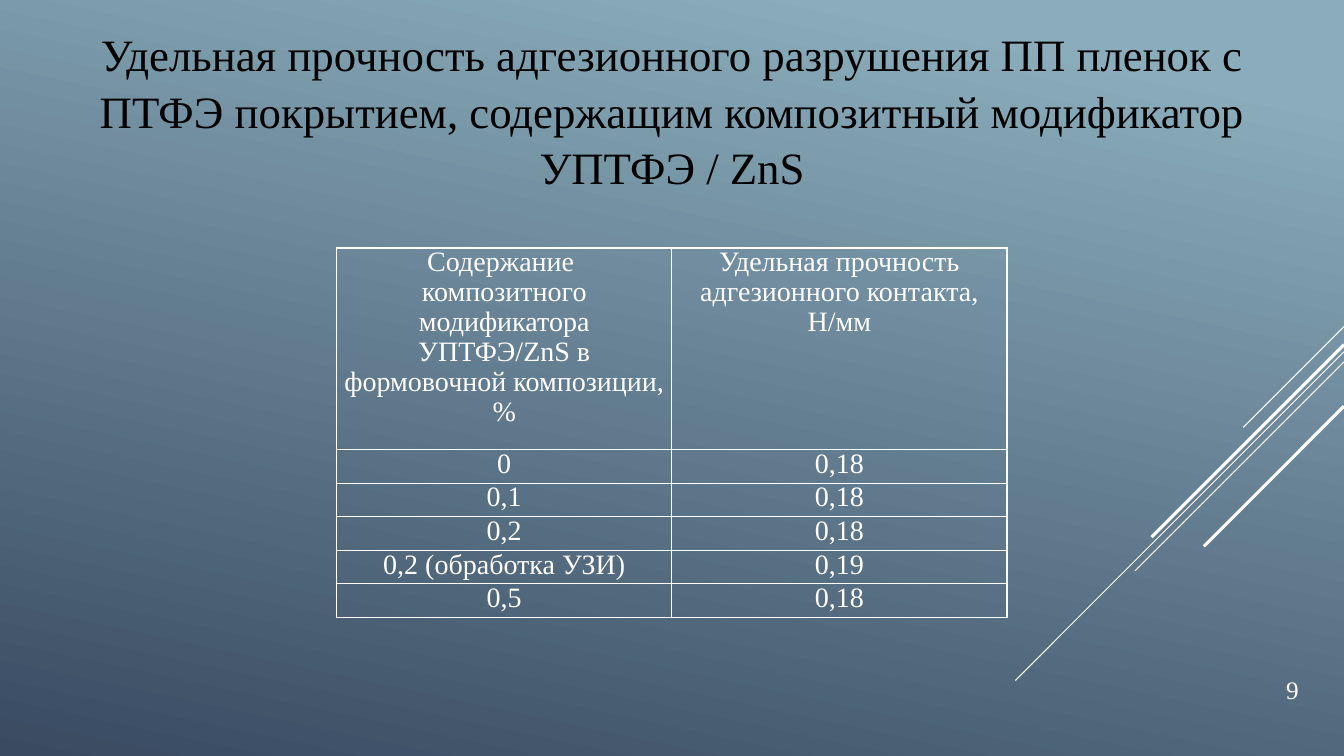
from dataclasses import dataclass

from lxml import etree
from pptx import Presentation
from pptx import util as u
from pptx.dml import color
from pptx.enum import shapes, text
from pptx.oxml import ns

STRENGTH_ROWS = [
    ("Содержание  композитного модификатора УПТФЭ/ZnS в формовочной композиции, %",
     "Удельная прочность адгезионного контакта, Н/мм"),
    ("0", "0,18"),
    ("0,1", "0,18"),
    ("0,2", "0,18"),
    ("0,2 (обработка УЗИ)", "0,19"),
    ("0,5", "0,18"),
]

# Each stroke leaves the right edge at 45 degrees: (start y, run, weight)
DIAGONAL_STROKES = [
    (233.3, 72, 0.75),
    (251.3, 234.7, 0.75),
    (258.5, 149.3, 0.75),
    (246.2, 137.5, 2.25),
    (290.2, 100.1, 2.25),
]


@dataclass(frozen=True)
class Theme:
    font: str = "Times New Roman"
    title_color: str = "000000"
    light: str = "FFFFFF"
    sky: str = "8AACBB"
    deep: str = "394A61"
    title_size: float = 32
    table_size: float = 20
    number_size: float = 18
    title_spacing: float = 1.05
    table_spacing: float = 0.96
    border: float = 1


class SlideBuilder:
    def __init__(self, slide, theme):
        self.slide = slide
        self.theme = theme

    def background(self):
        fill = self.slide.background.fill
        fill.gradient()
        fill.gradient_angle = 360 - 102
        stops = ((0.1, self.theme.sky), (1, self.theme.deep))
        for stop, (position, shade) in zip(fill.gradient_stops, stops):
            stop.position = position
            stop.color.rgb = color.RGBColor.from_string(shade)

    def stroke(self, x, y, run, weight):
        line = self.slide.shapes.add_connector(
            shapes.MSO_CONNECTOR.STRAIGHT,
            u.Pt(x), u.Pt(y), u.Pt(x - run), u.Pt(y + run))
        line.line.color.rgb = color.RGBColor.from_string(self.theme.light)
        line.line.width = u.Pt(weight)
        etree.SubElement(line._element.spPr, ns.qn("a:effectLst"))

    def set_text(self, frame, wording, size, shade, align, spacing=1.0):
        frame.word_wrap = True
        paragraph = frame.paragraphs[0]
        paragraph.text = wording
        paragraph.alignment = align
        paragraph.line_spacing = spacing
        paragraph.font.name = self.theme.font
        paragraph.font.size = u.Pt(size)
        paragraph.font.color.rgb = color.RGBColor.from_string(shade)

    def label(self, left, top, width, height, wording, size, shade, align, spacing=1.0):
        box = self.slide.shapes.add_textbox(
            u.Pt(left), u.Pt(top), u.Pt(width), u.Pt(height))
        self.set_text(box.text_frame, wording, size, shade, align, spacing)

    def table(self, left, top, column_width, header_height, row_height, rows):
        columns = len(rows[0])
        height = header_height + row_height * (len(rows) - 1)
        grid = self.slide.shapes.add_table(
            len(rows), columns, u.Pt(left), u.Pt(top),
            u.Pt(column_width * columns), u.Pt(height)).table
        grid.first_row = grid.horz_banding = False
        for index, (row, values) in enumerate(zip(grid.rows, rows)):
            row.height = u.Pt(row_height if index else header_height)
            for cell, value in zip(row.cells, values):
                cell.margin_left = cell.margin_right = u.Pt(5)
                cell.margin_top = cell.margin_bottom = 0
                self.set_text(cell.text_frame, value, self.theme.table_size,
                              self.theme.light, text.PP_ALIGN.CENTER,
                              self.theme.table_spacing)
                self.outline(cell)
                cell.fill.background()

    def outline(self, cell):
        properties = cell._tc.get_or_add_tcPr()
        for side in ("a:lnL", "a:lnR", "a:lnT", "a:lnB"):
            edge = etree.SubElement(properties, ns.qn(side),
                                    w=str(u.Pt(self.theme.border)))
            solid = etree.SubElement(edge, ns.qn("a:solidFill"))
            etree.SubElement(solid, ns.qn("a:srgbClr"), val=self.theme.light)


def main():
    deck = Presentation()
    deck.slide_width, deck.slide_height = u.Pt(960), u.Pt(540)
    theme = Theme()
    builder = SlideBuilder(deck.slides.add_slide(deck.slide_layouts[6]), theme)

    builder.background()
    for y, run, weight in DIAGONAL_STROKES:
        builder.stroke(960, y, run, weight)
    builder.label(61.9, 13.7, 836.6, 123.8,
                  "Удельная прочность адгезионного разрушения ПП пленок с "
                  "ПТФЭ покрытием, содержащим композитный модификатор УПТФЭ / ZnS",
                  theme.title_size, theme.title_color,
                  text.PP_ALIGN.CENTER, theme.title_spacing)
    builder.table(240.5, 177.1, 239.4, 144, 24, STRENGTH_ROWS)
    builder.label(911.5, 478.1, 27.4, 28.8, "9",
                  theme.number_size, theme.light, text.PP_ALIGN.LEFT)
    deck.save("out.pptx")


if __name__ == "__main__":
    main()
